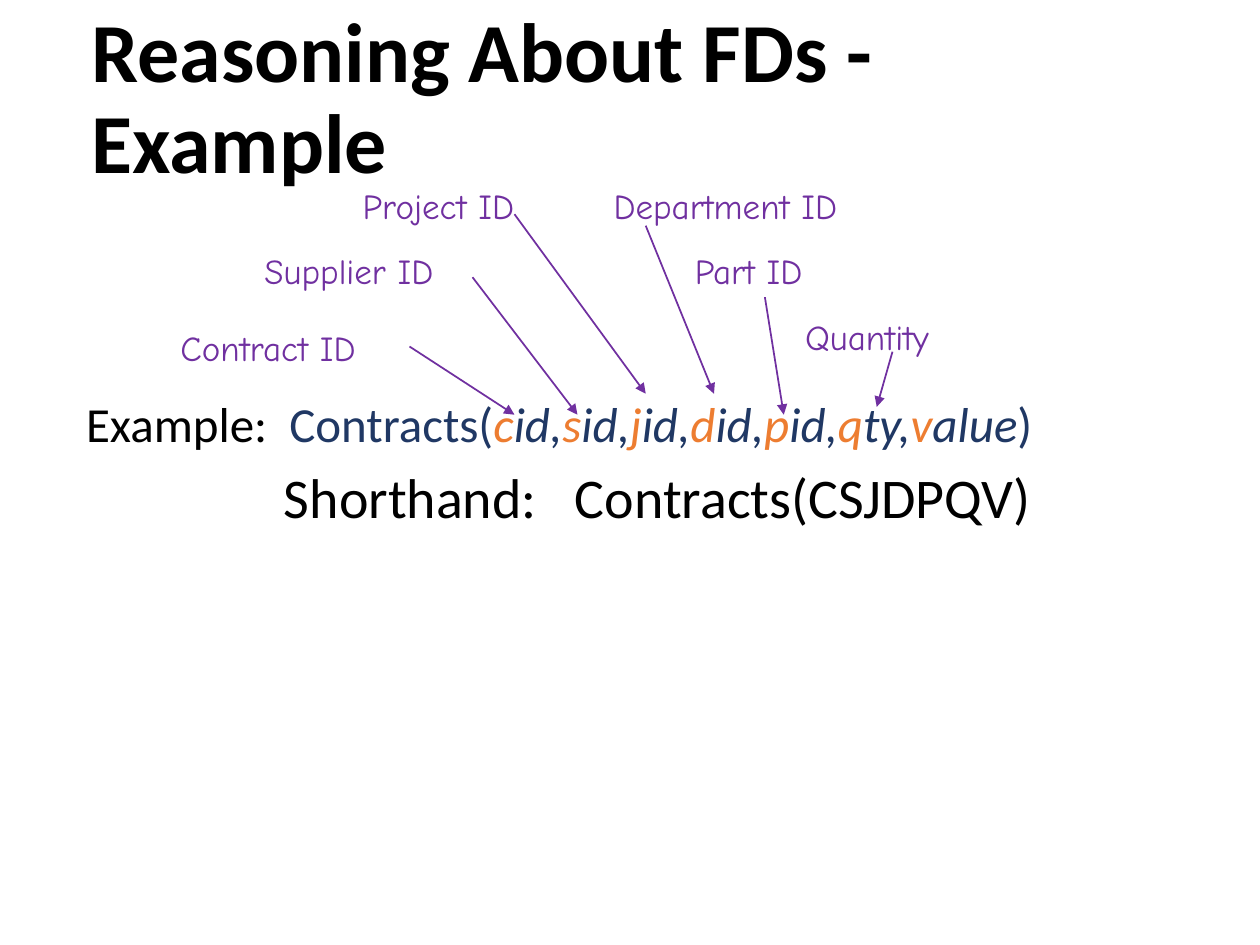
from collections import namedtuple

from lxml import etree
from pptx import Presentation, util as u
from pptx.dml.color import RGBColor
from pptx.enum import shapes, text
from pptx.oxml.ns import qn

BLACK = RGBColor(0x00, 0x00, 0x00)
NAVY = RGBColor(0x20, 0x38, 0x64)
ORANGE = RGBColor(0xED, 0x7D, 0x31)
PURPLE = RGBColor(0x70, 0x30, 0xA0)
BODY_FONT, LABEL_FONT = "Calibri", "Comic Neue"

# The slide is a grid of 240 columns by 180 rows of square cells.
CELL = u.Inches(10) / 240
Box = namedtuple("Box", "left top width height")

ATTRIBUTES = ["cid,", "sid,", "jid,", "did,", "pid,", "qty,", "value"]

# Each label: wording, box, arrow start, arrow end (cells within the diagram).
LABELS = [
    ("Contract ID", Box(2, 27, 45.8, 10.5), (48, 32), (68, 45)),
    ("Supplier ID", Box(18, 12.3, 47, 10.5), (60, 18.8), (80, 45)),
    ("Project ID", Box(36.7, 0, 39.8, 10.5), (68, 6.8), (93, 41)),
    ("Department ID", Box(84.5, 0, 57.8, 10.5), (93, 9), (106, 41)),
    ("Part ID", Box(100, 12.3, 31.2, 10.5), (115.7, 22.6), (119.3, 45)),
    ("Quantity", Box(121, 25, 37.4, 10.5), (140, 33), (137, 43.5)),
]


def cells(*counts):
    return [round(count * CELL) for count in counts]


def place(shape, box):
    shape.left, shape.top, shape.width, shape.height = cells(*box)


def add_span(para, wording, size, color, font=BODY_FONT, bold=False, italic=False):
    span = para.add_run()
    span.text = wording
    span.font.name, span.font.size = font, u.Pt(size)
    span.font.bold, span.font.italic = bold, italic
    span.font.color.rgb = color


def format_line(para, margin, indent):
    """Set an unbulleted body line with its indents in inches."""
    para.line_spacing, para.space_before = 0.9, u.Pt(10)
    props = para._p.get_or_add_pPr()
    props.set("marL", str(u.Inches(margin)))
    props.set("indent", str(u.Inches(indent)))
    etree.SubElement(props, qn("a:buNone"))


def add_title(page, box):
    title = page.shapes.title
    place(title, box)
    frame = title.text_frame
    frame.auto_size = text.MSO_AUTO_SIZE.NONE
    frame.vertical_anchor = text.MSO_ANCHOR.MIDDLE
    para = frame.paragraphs[0]
    para.alignment, para.line_spacing = text.PP_ALIGN.LEFT, 0.9
    add_span(para, "Reasoning About FDs - Example", 48, BLACK, bold=True)


def add_body(page, box):
    body = page.placeholders[1]
    place(body, box)
    frame = body.text_frame
    frame.auto_size = text.MSO_AUTO_SIZE.NONE

    relation = frame.paragraphs[0]
    format_line(relation, 0.25, -0.25)
    add_span(relation, "Example:  ", 28, BLACK)
    add_span(relation, "Contracts(", 28, NAVY)
    for name in ATTRIBUTES:
        add_span(relation, name[0], 28, ORANGE, italic=True)
        add_span(relation, name[1:], 28, NAVY, italic=True)
    add_span(relation, ")", 28, NAVY)

    shorthand = frame.add_paragraph()
    format_line(shorthand, 1.57, 0)
    add_span(shorthand, "Shorthand:   Contracts(CSJDPQV)", 32, BLACK)


def add_label(group, box, wording):
    label = group.shapes.add_textbox(*cells(*box))
    label.text_frame.word_wrap = True
    add_span(label.text_frame.paragraphs[0], wording, 20, PURPLE, LABEL_FONT)


def add_arrow(group, start, end):
    arrow = group.shapes.add_connector(
        shapes.MSO_CONNECTOR.STRAIGHT, *cells(*start, *end))
    arrow.line.color.rgb, arrow.line.width = PURPLE, u.Pt(1)
    etree.SubElement(arrow.line._get_or_add_ln(), qn("a:tailEnd"), type="triangle")
    etree.SubElement(arrow._element.spPr, qn("a:effectLst"))


def add_diagram(page, box):
    """Name the attributes with labels and arrows, placed from the box's corner."""
    def shift(point):
        return box.left + point[0], box.top + point[1]

    group = page.shapes.add_group_shape()
    for wording, area, _, _ in LABELS:
        add_label(group, Box(*shift(area), area.width, area.height), wording)
    for _, _, start, end in LABELS:
        add_arrow(group, shift(start), shift(end))


def main():
    deck = Presentation()
    deck.slide_width, deck.slide_height = cells(240, 180)
    page = deck.slides.add_slide(deck.slide_layouts[1])
    add_title(page, Box(15, 6.2, 207, 26))
    add_body(page, Box(14, 75, 218, 95.5))
    add_diagram(page, Box(30, 34, 158.4, 45))
    deck.save("out.pptx")


if __name__ == "__main__":
    main()
